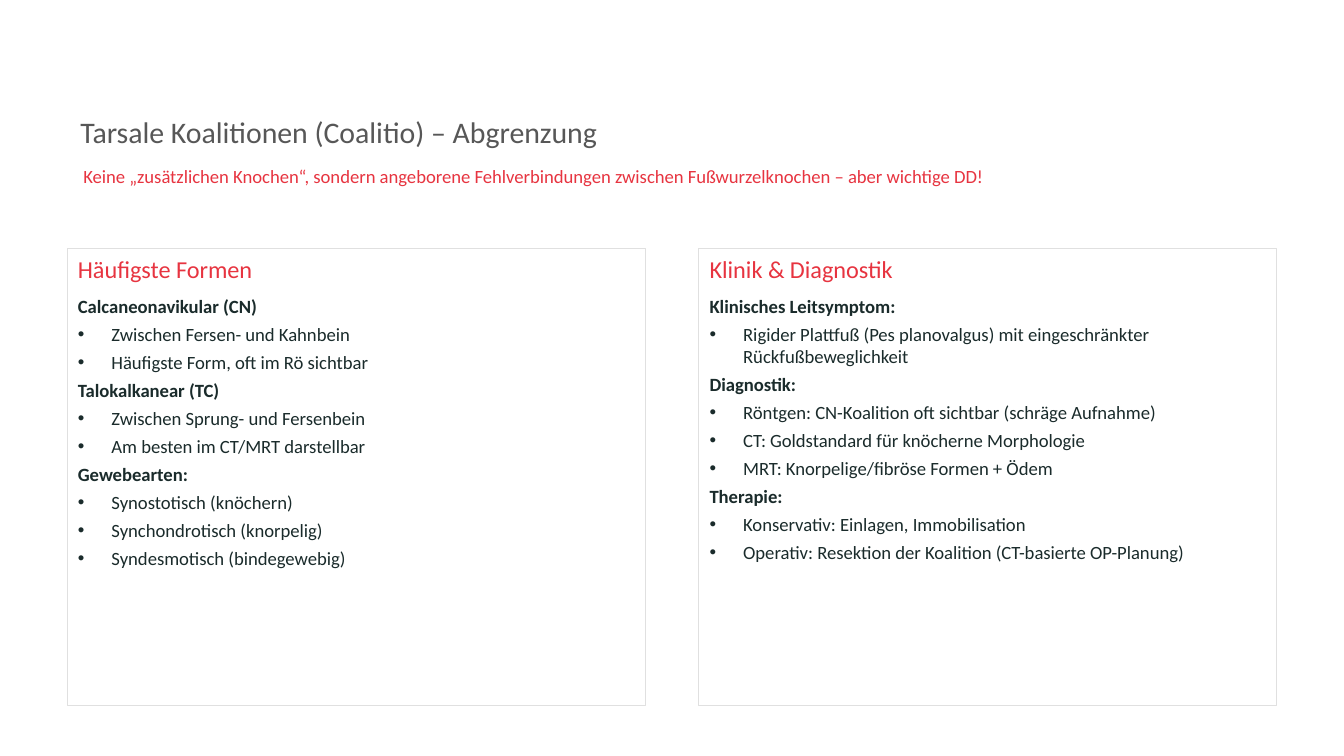
from dataclasses import dataclass

from lxml.etree import SubElement
from pptx import Presentation
from pptx.dml.color import RGBColor as Color
from pptx.enum.shapes import MSO_SHAPE as Shape
from pptx.enum.text import MSO_ANCHOR as Anchor, PP_ALIGN as Align
from pptx.oxml.ns import qn
from pptx.util import Inches, Pt


@dataclass(frozen=True)
class Theme:
    font: str = "Calibri"
    bullet_font: str = "Arial"
    title: str = "575757"
    accent: str = "E73440"
    body: str = "1A2B2B"
    border: str = "E0E0E0"
    panel: str = "FFFFFF"
    title_size: float = 16
    heading_size: float = 13
    body_size: float = 10
    border_width: float = 0.5
    indent: float = 0.25


def write_text(para, text, *, font, size, color, bold=False, after=0):
    para.alignment = Align.LEFT
    para.space_after = Pt(after)
    para.font.size = Pt(size)
    span = para.add_run()
    span.text = text
    span.font.name = font
    span.font.size = Pt(size)
    span.font.bold = bold
    span.font.color.rgb = Color.from_string(color)


def add_bullet(para, indent, font):
    properties = para._p.get_or_add_pPr()
    properties.set("marL", str(Inches(indent)))
    properties.set("indent", str(-Inches(indent)))
    SubElement(properties, qn("a:buFont"), typeface=font)
    SubElement(properties, qn("a:buChar"), char="•")


class SlideBuilder:
    def __init__(self, slide, theme):
        self.slide = slide
        self.theme = theme

    def prepare_frame(self, box, inset_x, inset_y):
        frame = box.text_frame
        frame.word_wrap = True
        frame.vertical_anchor = Anchor.TOP
        frame.margin_left = frame.margin_right = Inches(inset_x)
        frame.margin_top = frame.margin_bottom = Inches(inset_y)
        return frame

    def text(self, text, left, top, width, height, *, size, color, inset=(0.1, 0.05)):
        box = self.slide.shapes.add_textbox(
            Inches(left), Inches(top), Inches(width), Inches(height))
        frame = self.prepare_frame(box, *inset)
        write_text(frame.paragraphs[0], text,
                   font=self.theme.font, size=size, color=color)

    def panel(self, heading, sections, left, top, width, height):
        theme = self.theme
        box = self.slide.shapes.add_shape(
            Shape.RECTANGLE, Inches(left), Inches(top), Inches(width), Inches(height))
        box.shadow.inherit = False
        box.fill.solid()
        box.fill.fore_color.rgb = Color.from_string(theme.panel)
        box.line.color.rgb = Color.from_string(theme.border)
        box.line.width = Pt(theme.border_width)
        frame = self.prepare_frame(box, 0.08, 0.04)
        write_text(frame.paragraphs[0], heading, font=theme.font,
                   size=theme.heading_size, color=theme.accent, after=6)
        body = dict(font=theme.font, size=theme.body_size, color=theme.body, after=3)
        for label, points in sections.items():
            write_text(frame.add_paragraph(), label, bold=True, **body)
            for point in points:
                para = frame.add_paragraph()
                add_bullet(para, theme.indent, theme.bullet_font)
                write_text(para, point, **body)


PANELS = {
    "Häufigste Formen": {
        "Calcaneonavikular (CN)": [
            "Zwischen Fersen- und Kahnbein",
            "Häufigste Form, oft im Rö sichtbar",
        ],
        "Talokalkanear (TC)": [
            "Zwischen Sprung- und Fersenbein",
            "Am besten im CT/MRT darstellbar",
        ],
        "Gewebearten:": [
            "Synostotisch (knöchern)",
            "Synchondrotisch (knorpelig)",
            "Syndesmotisch (bindegewebig)",
        ],
    },
    "Klinik & Diagnostik": {
        "Klinisches Leitsymptom:": [
            "Rigider Plattfuß (Pes planovalgus) mit eingeschränkter Rückfußbeweglichkeit",
        ],
        "Diagnostik:": [
            "Röntgen: CN-Koalition oft sichtbar (schräge Aufnahme)",
            "CT: Goldstandard für knöcherne Morphologie",
            "MRT: Knorpelige/fibröse Formen + Ödem",
        ],
        "Therapie:": [
            "Konservativ: Einlagen, Immobilisation",
            "Operativ: Resektion der Koalition (CT-basierte OP-Planung)",
        ],
    },
}


def main():
    deck = Presentation()
    deck.slide_width, deck.slide_height = Inches(10), Inches(10 * 9 / 16)
    theme = Theme()
    page = SlideBuilder(deck.slides.add_slide(deck.slide_layouts[6]), theme)

    margin, content_width, gap = 0.5, 9, 0.4
    page.text("Tarsale Koalitionen (Coalitio) – Abgrenzung",
              margin, 0.8, content_width, 0.5,
              size=theme.title_size, color=theme.title)
    page.text("Keine „zusätzlichen Knochen“, sondern angeborene Fehlverbindungen "
              "zwischen Fußwurzelknochen – aber wichtige DD!",
              margin, 1.15, content_width, 0.55,
              size=theme.body_size, color=theme.accent, inset=(0.12, 0.08))

    panel_width = (content_width - gap) / len(PANELS)
    for column, (heading, sections) in enumerate(PANELS.items()):
        left = margin + column * (panel_width + gap)
        page.panel(heading, sections, left, 1.85, panel_width, 3.4)

    deck.save("out.pptx")


if __name__ == "__main__":
    main()
